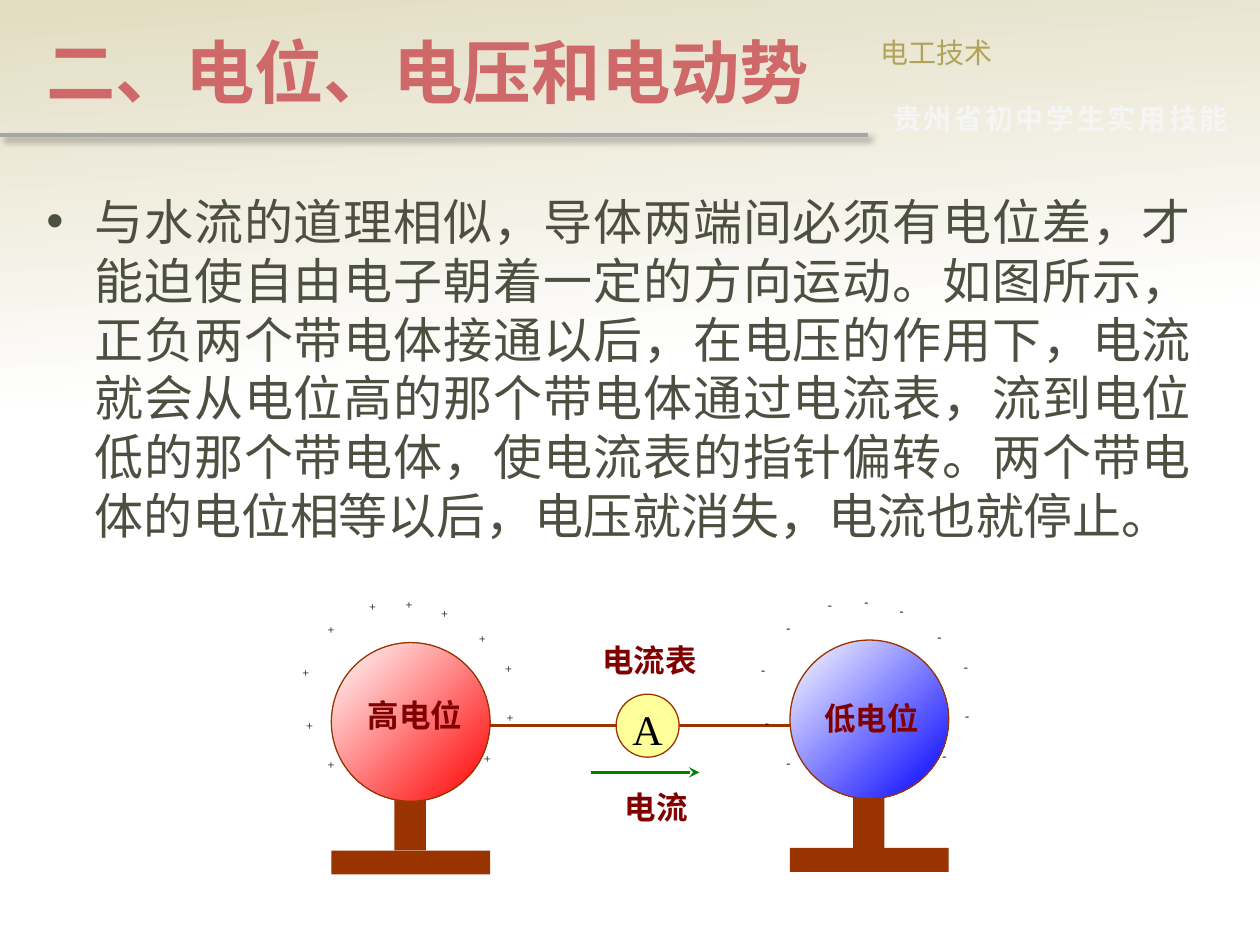
from copy import deepcopy
from dataclasses import dataclass

from lxml.etree import SubElement
from pptx import Presentation
from pptx.dml.color import RGBColor
from pptx.enum.shapes import MSO_CONNECTOR, MSO_SHAPE
from pptx.enum.text import MSO_ANCHOR as Anchor, PP_ALIGN as Align
from pptx.oxml.ns import qn
from pptx.util import Inches, Pt


@dataclass(frozen=True)
class Theme:
    cjk: str = "Noto Sans CJK SC"
    latin: str = "Times New Roman"
    cream: str = "E2DCC1"
    white: str = "FFFFFF"
    rule: str = "A6A6A6"
    shadow: str = "000000"
    title: str = "CF6868"
    course: str = "B1A35A"
    banner: str = "F5F5F5"
    body: str = "4D5040"
    ink: str = "000000"
    brown: str = "993300"
    label: str = "800000"
    high: str = "FF0000"
    low: str = "0000FF"
    meter: str = "FFFF99"
    current: str = "008000"
    title_size: float = 39.6
    body_size: float = 28
    meter_size: float = 24
    label_size: float = 18
    header_size: float = 16
    charge_size: float = 7


THEME = Theme()

# Charge marks around a ball, measured from the top left of the charged body
CHARGES = [(0.2, 1.27), (0.03, 0.96), (0, 0.54), (0.2, 0.2), (0.53, 0.02), (0.82, 0),
           (1.1, 0.07), (1.4, 0.27), (1.61, 0.51), (1.62, 0.9), (1.44, 1.22)]


def rgb(value):
    return RGBColor.from_string(value)


def box_at(left, top, width, height):
    return [Inches(length) for length in (left, top, width, height)]


def write(paragraph, text, size, color, font=THEME.cjk, bold=False, align=Align.LEFT):
    paragraph.alignment = align
    run = paragraph.add_run()
    run.text = text
    run.font.size, run.font.bold, run.font.name = Pt(size), bold, font
    run.font.color.rgb = rgb(color)
    SubElement(run.font._element, qn("a:ea")).set("typeface", THEME.cjk)


def clear_insets(frame):
    frame.margin_left = frame.margin_top = frame.margin_right = frame.margin_bottom = 0


def add_text(shapes, box, text, size, color, inset=False, **style):
    frame = shapes.add_textbox(*box_at(*box)).text_frame
    frame.word_wrap = True
    if not inset:
        clear_insets(frame)
    paragraph = frame.paragraphs[0]
    write(paragraph, text, size, color, **style)
    return paragraph


def add_label(shapes, box, text):
    add_text(shapes, box, text, THEME.label_size, THEME.label, bold=True)


def set_gradient(fill, stops, angle):
    """Fill with (position, colour) stops; the angle runs clockwise."""
    fill.gradient()
    fill.gradient_angle = 360 - angle
    stop_list = fill._fill._gradFill.find(qn("a:gsLst"))
    while len(stop_list) < len(stops):
        stop_list.append(deepcopy(stop_list[-1]))
    for stop, (position, color) in zip(fill.gradient_stops, stops):
        stop.position = position
        stop.color.rgb = rgb(color)


def add_shape(shapes, kind, box, fill=None, line=None):
    shape = shapes.add_shape(kind, *box_at(*box))
    shape.shadow.inherit = False
    if fill:
        shape.fill.solid()
        shape.fill.fore_color.rgb = rgb(fill)
    if line:
        shape.line.color.rgb = rgb(line)
        shape.line.width = Pt(0.75)
    else:
        shape.line.fill.background()
    return shape


def add_line(shapes, left, right, y, color, width):
    """Draw a level line; return it with its empty effect list."""
    line = shapes.add_connector(MSO_CONNECTOR.STRAIGHT, Inches(left), Inches(y),
                                Inches(right), Inches(y))
    line.line.color.rgb = rgb(color)
    line.line.width = Pt(width)
    return line, SubElement(line._element.spPr, qn("a:effectLst"))


def add_header(slide, left, top, width, height):
    shapes = slide.shapes
    bottom, right = top + height, left + width
    _, effects = add_line(shapes, 0, right, bottom, THEME.rule, 2.25)
    shadow = SubElement(effects, qn("a:outerShdw"), blurRad=str(Pt(4)), dist=str(Pt(3)),
                        dir=str(45 * 60000), algn="tl", rotWithShape="0")
    shade = SubElement(shadow, qn("a:srgbClr"), val=THEME.shadow)
    SubElement(shade, qn("a:alpha"), val="40000")

    title = shapes.title
    title.left, title.top, title.width, title.height = box_at(left, top, width, height)
    title.text_frame.vertical_anchor = Anchor.MIDDLE
    write(title.text_frame.paragraphs[0], "二、电位、电压和电动势",
          THEME.title_size, THEME.title, bold=True)

    add_text(shapes, (right, top + 0.18, 3.11, 0.37), "电工技术", THEME.header_size,
             THEME.course, inset=True, align=Align.JUSTIFY)
    banner = add_text(shapes, (right + 0.2, bottom - 0.26, 2.9, 0.37), "贵州省初中学生实用技能",
                      THEME.header_size, THEME.banner, bold=True)
    banner.runs[0].font._element.set("spc", "160")


def add_explanation(shapes, box):
    paragraph = add_text(
        shapes, box,
        "与水流的道理相似，导体两端间必须有电位差，才能迫使自由电子朝着一定的方向运动。"
        "如图所示，正负两个带电体接通以后，在电压的作用下，电流就会从电位高的那个带电体"
        "通过电流表，流到电位低的那个带电体，使电流表的指针偏转。两个带电体的电位相等以后，"
        "电压就消失，电流也就停止。",
        THEME.body_size, THEME.body, inset=True, align=Align.JUSTIFY)
    paragraph.space_before = Pt(0.2 * THEME.body_size)
    properties = paragraph._p.get_or_add_pPr()
    properties.set("marL", str(Inches(0.38)))
    properties.set("indent", str(Inches(-0.38)))
    SubElement(properties, qn("a:buFont"), typeface="Arial")
    SubElement(properties, qn("a:buChar"), char="•")


def add_charged_body(shapes, left, top, color, sign):
    """Group a ball on its stand with the charge marks around it."""
    body = shapes.add_group_shape().shapes
    add_shape(body, MSO_SHAPE.RECTANGLE, (left + 0.73, top + 1.6, 0.25, 0.41), THEME.brown)
    add_shape(body, MSO_SHAPE.RECTANGLE, (left + 0.23, top + 2.01, 1.26, 0.19), THEME.brown)
    ball = add_shape(body, MSO_SHAPE.OVAL, (left + 0.23, top + 0.36, 1.26, 1.26),
                     line=THEME.brown)
    set_gradient(ball.fill, [(0, THEME.white), (1, color)], 45)
    for dx, dy in CHARGES:
        add_text(body, (left + dx, top + dy, 0.25, 0.41), sign, THEME.charge_size,
                 THEME.ink, font=THEME.latin)


def add_ammeter(shapes, left, top, size):
    meter = add_shape(shapes, MSO_SHAPE.OVAL, (left, top, size, size), THEME.meter, THEME.brown)
    frame = meter.text_frame
    clear_insets(frame)
    frame.margin_top = Inches(0.04)
    frame.vertical_anchor = Anchor.MIDDLE
    write(frame.paragraphs[0], "A", THEME.meter_size, THEME.ink, font=THEME.latin,
          align=Align.CENTER)


def add_circuit(shapes, left, top):
    add_line(shapes, left + 1.26, left + 4.03, top + 1.02, THEME.brown, 1.5)
    add_charged_body(shapes, left, top, THEME.high, "+")
    add_charged_body(shapes, left + 3.64, top - 0.02, THEME.low, "-")
    add_ammeter(shapes, left + 2.49, top + 0.77, 0.5)
    add_label(shapes, (left + 0.52, top + 0.78, 0.76, 0.41), "高电位")
    add_label(shapes, (left + 4.14, top + 0.81, 0.91, 0.41), "低电位")
    add_label(shapes, (left + 2.38, top + 0.35, 0.93, 0.41), "电流表")
    arrow, _ = add_line(shapes, left + 2.29, left + 3.15, top + 1.39, THEME.current, 1.5)
    SubElement(arrow.line._get_or_add_ln(), qn("a:tailEnd"), type="stealth")
    add_label(shapes, (left + 2.56, top + 1.51, 0.67, 0.41), "电流")


def main():
    deck = Presentation()
    deck.slide_width, deck.slide_height = Inches(10), Inches(7.5)
    slide = deck.slides.add_slide(deck.slide_layouts[5])
    set_gradient(slide.background.fill,
                 [(0, THEME.cream), (0.4, THEME.white), (1, THEME.white)], 85)
    add_header(slide, 0.27, 0.05, 6.62, 1.02)
    add_explanation(slide.shapes, (0.27, 1.47, 9.29, 3.07))
    add_circuit(slide.shapes, 2.4, 4.74)
    deck.save("out.pptx")


if __name__ == "__main__":
    main()
